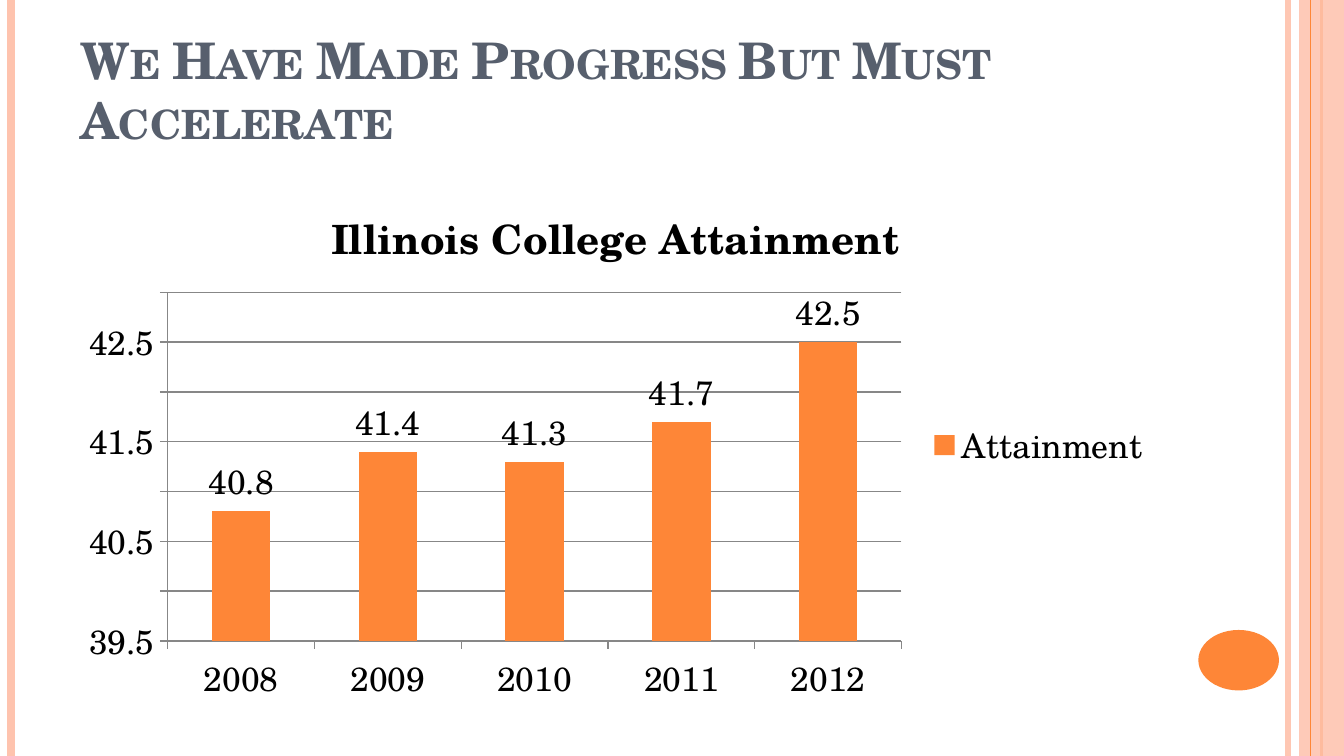
from lxml.etree import SubElement
from pptx import Presentation
from pptx.chart.data import CategoryChartData
from pptx.dml.color import RGBColor
from pptx.enum.chart import XL_CHART_TYPE as ChartType
from pptx.enum.chart import XL_LABEL_POSITION as LabelPosition
from pptx.enum.chart import XL_LEGEND_POSITION as LegendPosition
from pptx.enum.shapes import MSO_CONNECTOR as Connector
from pptx.enum.shapes import MSO_SHAPE as Shape
from pptx.enum.text import MSO_ANCHOR as Anchor
from pptx.enum.text import PP_ALIGN as Align
from pptx.oxml.ns import qn
from pptx.util import Pt

ORANGE = RGBColor(0xFE, 0x86, 0x37)
PEACH = RGBColor(0xFE, 0xC3, 0xAE)
SLATE = RGBColor(0x57, 0x5F, 0x6D)
GRAY = RGBColor(0x87, 0x87, 0x87)
BLACK = RGBColor(0, 0, 0)
FONT = "TeX Gyre Schola"
WIDTH, HEIGHT = 720, 405


def set_opacity(element, percent):
    """Make the first solid colour under an element partly transparent."""
    color = next(element.iter(qn("a:srgbClr")))
    SubElement(color, qn("a:alpha")).set("val", str(percent * 1000))


def add_stripe(slide, x, weight, color, opacity=100):
    stripe = slide.shapes.add_connector(
        Connector.STRAIGHT, Pt(x), Pt(0), Pt(x), Pt(HEIGHT))
    stripe.line.width = Pt(weight)
    stripe.line.color.rgb = color
    properties = stripe._element.spPr
    SubElement(properties, qn("a:effectLst"))
    if opacity < 100:
        set_opacity(properties, opacity)


def add_filled_shape(slide, kind, bounds, color, opacity=100):
    shape = slide.shapes.add_shape(kind, *map(Pt, bounds))
    shape.shadow.inherit = False
    shape.fill.solid()
    shape.fill.fore_color.rgb = color
    shape.line.fill.background()
    if opacity < 100:
        set_opacity(shape._element.spPr, opacity)


def style_font(font, size, color, bold=False):
    font.name = FONT
    font.size = Pt(size)
    font.bold = bold
    font.color.rgb = color


def set_title(slide, text):
    title = slide.shapes.title
    title.left, title.top, title.width, title.height = map(
        Pt, (36, 16.5, 588, 67.5))
    frame = title.text_frame
    frame.word_wrap = True
    frame.vertical_anchor = Anchor.BOTTOM
    para = frame.paragraphs[0]
    para.alignment = Align.LEFT
    span = para.add_run()
    span.text = text
    style_font(span.font, 27, SLATE, bold=True)
    span._r.get_or_add_rPr().set("cap", "small")


def style_line(line):
    line.color.rgb = GRAY
    line.width = Pt(0.75)


def add_attainment_chart(slide):
    data = CategoryChartData()
    data.categories = ["2008", "2009", "2010", "2011", "2012"]
    data.add_series("Attainment", (40.8, 41.4, 41.3, 41.7, 42.5))
    chart = slide.shapes.add_chart(
        ChartType.COLUMN_CLUSTERED, *map(Pt, (36, 94.5, 588, 288)), data).chart
    style_font(chart.font, 18, BLACK)

    # Heading and legend
    chart.has_title = True
    heading = chart.chart_title.text_frame
    heading.text = "Illinois College Attainment"
    style_font(heading.paragraphs[0].runs[0].font, 21.6, BLACK, bold=True)
    chart.has_legend = True
    chart.legend.position = LegendPosition.RIGHT
    chart.legend.include_in_layout = False

    # Axes
    values = chart.value_axis
    values.minimum_scale, values.maximum_scale = 39.5, 43
    values.major_unit = 0.5
    values.tick_labels.number_format = "General"
    values.tick_labels.number_format_is_linked = False
    style_line(values.major_gridlines.format.line)
    for axis in (values, chart.category_axis):
        style_line(axis.format.line)

    # Columns and their values
    plot = chart.plots[0]
    plot.vary_by_categories = False
    plot.gap_width = 150
    fill = plot.series[0].format.fill
    fill.solid()
    fill.fore_color.rgb = ORANGE
    plot.has_data_labels = True
    plot.data_labels.show_value = True
    plot.data_labels.position = LabelPosition.OUTSIDE_END


def main():
    deck = Presentation()
    deck.slide_width, deck.slide_height = Pt(WIDTH), Pt(HEIGHT)
    slide = deck.slides.add_slide(deck.slide_layouts[5])

    # Side stripes and page dot
    add_stripe(slide, 690, 3, PEACH, opacity=93)
    add_stripe(slide, 6, 4.5, PEACH)
    add_stripe(slide, 708, 1.5, ORANGE)
    add_filled_shape(slide, Shape.RECTANGLE, (696, 0, 24, HEIGHT), PEACH, 87)
    add_stripe(slide, 702, 0.75, ORANGE)
    add_filled_shape(slide, Shape.OVAL, (642, 337.5, 43.2, 32.4), ORANGE)

    # Content
    set_title(slide, "We Have Made Progress But Must Accelerate")
    add_attainment_chart(slide)
    deck.save("out.pptx")


if __name__ == "__main__":
    main()
